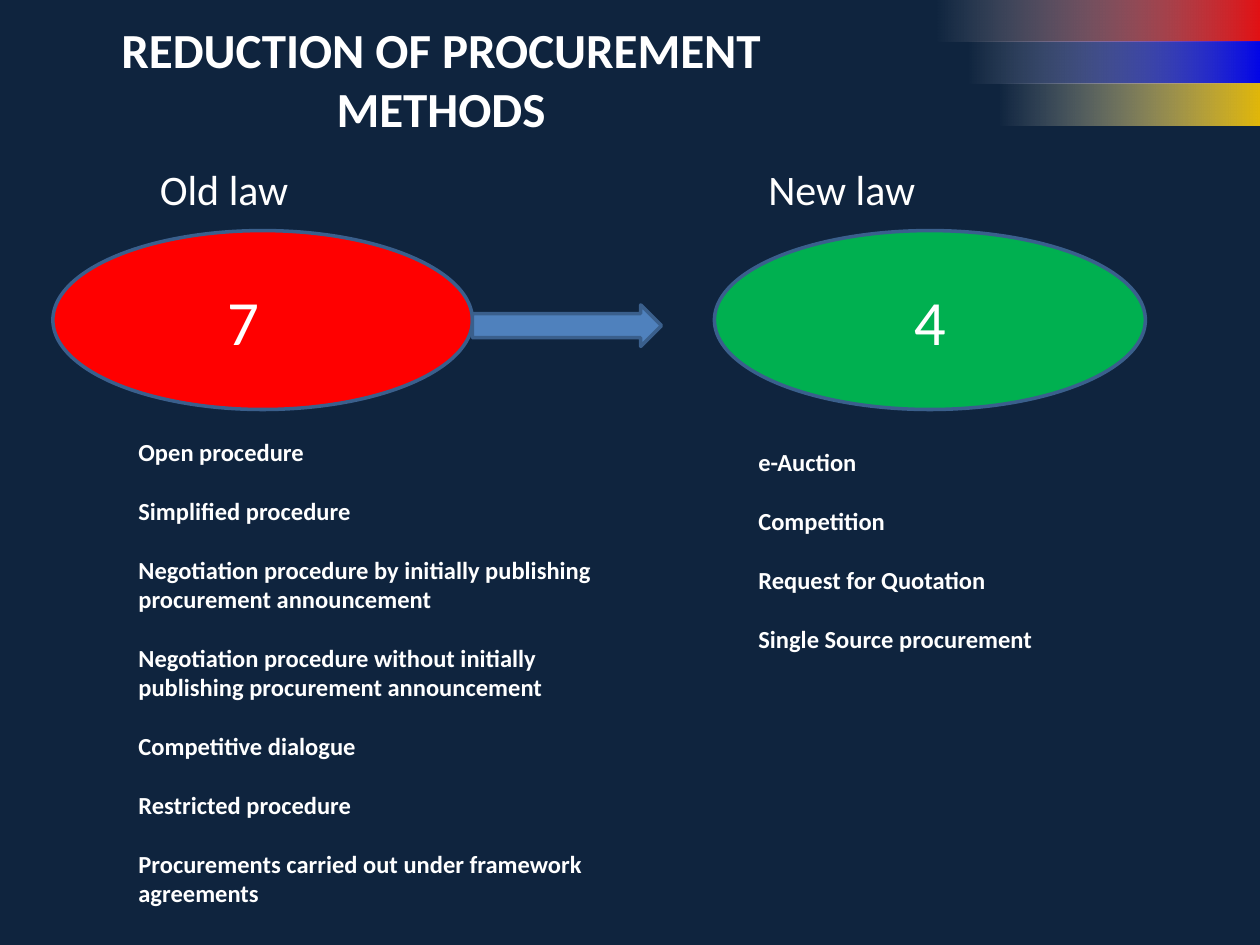
from dataclasses import dataclass

from lxml import etree
from pptx import Presentation
from pptx.dml.color import RGBColor
from pptx.enum.shapes import MSO_SHAPE
from pptx.enum.text import MSO_ANCHOR, MSO_AUTO_SIZE, PP_ALIGN
from pptx.oxml.ns import qn
from pptx.util import Inches, Pt

RECT, OVAL, ARROW = MSO_SHAPE.RECTANGLE, MSO_SHAPE.OVAL, MSO_SHAPE.RIGHT_ARROW
MIDDLE, NO_FIT = MSO_ANCHOR.MIDDLE, MSO_AUTO_SIZE.NONE
CENTER, LEFT = PP_ALIGN.CENTER, PP_ALIGN.LEFT
FONT = "Calibri"
COLORS = {
    "navy": "0F243E", "white": "FFFFFF", "outline": "3A5F8C",
    "arrow": "4F81BD", "old": "FF0000", "new": "00B050",
    "red": "FF0D0D", "blue": "0000FF", "yellow": "FFCC00",
}
STRIPE_HEIGHT = 1 / 3
STRIPE_STEP = 0.25


@dataclass
class Box:
    left: float
    top: float
    width: float
    height: float

    def emu(self) -> tuple:
        return tuple(Inches(v) for v in (self.left, self.top, self.width, self.height))


@dataclass
class Law:
    name: str
    name_box: Box
    count: str
    color: str
    oval_box: Box
    right_inset: float
    methods: list[str]
    methods_box: Box


LAWS = [
    Law("Old law", Box(1.17, 1.25, 3.25, 0.51), "7", "old",
        Box(0.42, 1.83, 3.33, 1.42), 0.41,
        ["Open procedure",
         "Simplified procedure",
         "Negotiation procedure by initially publishing procurement announcement",
         "Negotiation procedure without initially publishing procurement announcement",
         "Competitive dialogue",
         "Restricted procedure",
         "Procurements carried out under framework agreements"],
        Box(1, 3.42, 3.92, 3.87)),
    Law("New law", Box(6, 1.25, 2.67, 0.51), "4", "new",
        Box(5.67, 1.83, 3.42, 1.42), 0.1,
        ["e-Auction", "Competition", "Request for Quotation", "Single Source procurement"],
        Box(5.92, 3.5, 3.42, 1.75)),
]


def rgb(name: str) -> RGBColor:
    return RGBColor.from_string(COLORS[name])


def write(tf, lines: list[str], size: float, bold=False, align=LEFT, gap: float = 0) -> None:
    tf.word_wrap = True
    for i, line in enumerate(lines):
        p = tf.add_paragraph() if i else tf.paragraphs[0]
        p.alignment = align
        p.space_before = Pt(gap if i else 0)
        r = p.add_run()
        r.text = line
        r.font.name, r.font.size, r.font.bold = FONT, Pt(size), bold
        r.font.color.rgb = rgb("white")


def add_text(s, box: Box, lines: list[str], size: float, bold=False, gap: float = 0) -> None:
    write(s.shapes.add_textbox(*box.emu()).text_frame, lines, size, bold, gap=gap)


def add_outlined(s, kind, box: Box, color: str):
    sp = s.shapes.add_shape(kind, *box.emu())
    sp.shadow.inherit = False
    sp.fill.solid()
    sp.fill.fore_color.rgb = rgb(color)
    sp.line.color.rgb = rgb("outline")
    sp.line.width = Pt(2)
    return sp


def add_stripe(s, row: int, color: str) -> None:
    shift = row * STRIPE_STEP
    box = Box(7.42 + shift, row * STRIPE_HEIGHT, 2.6 - shift, STRIPE_HEIGHT)
    sp = s.shapes.add_shape(RECT, *box.emu())
    sp.shadow.inherit = False
    sp.line.fill.background()
    sp.fill.gradient()
    sp.fill.gradient_angle = 0
    for stop, name, position in zip(sp.fill.gradient_stops, ("white", color), (0, 1)):
        stop.color.rgb = rgb(name)
        stop.position = position
    stop_colors = sp._element.spPr.find(qn("a:gradFill")).iter(qn("a:srgbClr"))
    for stop_color, alpha in zip(stop_colors, (0, 89000)):
        etree.SubElement(stop_color, qn("a:alpha")).set("val", str(alpha))


def add_law(s, law: Law) -> None:
    add_text(s, law.name_box, [law.name], 24)
    sp = add_outlined(s, OVAL, law.oval_box, law.color)
    tf = sp.text_frame
    tf.vertical_anchor = MIDDLE
    tf.margin_right = Inches(law.right_inset)
    write(tf, [law.count], 36, align=CENTER)
    add_text(s, law.methods_box, law.methods, 14, bold=True, gap=16.8)


def main() -> None:
    prs = Presentation()
    prs.slide_width, prs.slide_height = Inches(10), Inches(7.5)
    s = prs.slides.add_slide(prs.slide_layouts[5])
    s.background.fill.solid()
    s.background.fill.fore_color.rgb = rgb("navy")

    for row, color in enumerate(("red", "blue", "yellow")):
        add_stripe(s, row, color)

    title = s.shapes.title
    title.left, title.top, title.width, title.height = Box(0, 0.25, 7, 0.75).emu()
    tf = title.text_frame
    tf.auto_size = NO_FIT
    tf.vertical_anchor = MIDDLE
    write(tf, ["REDUCTION OF PROCUREMENT METHODS"], 28, bold=True, align=CENTER)

    for law in LAWS:
        add_law(s, law)
    arrow = add_outlined(s, ARROW, Box(3.75, 2.42, 1.5, 0.33), "arrow")
    arrow.adjustments[0] = 0.58

    prs.save("out.pptx")


if __name__ == "__main__":
    main()
